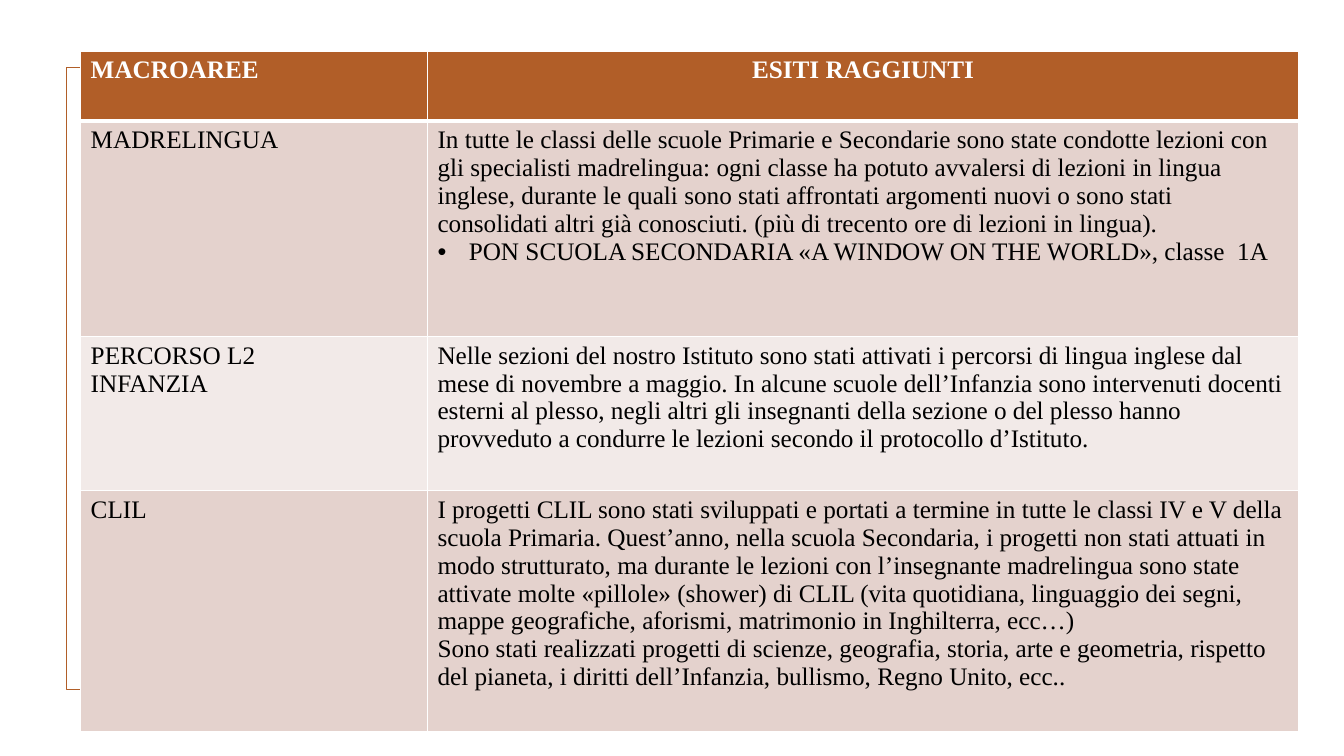
from lxml import etree
from pptx import Presentation
from pptx.dml.color import RGBColor
from pptx.enum.shapes import MSO_SHAPE
from pptx.enum.text import PP_ALIGN
from pptx.oxml.ns import qn
from pptx.util import Inches, Pt

RECTANGLE = MSO_SHAPE.RECTANGLE
LEFT, CENTER = PP_ALIGN.LEFT, PP_ALIGN.CENTER

WHITE = RGBColor(0xFF, 0xFF, 0xFF)
BLACK = RGBColor(0x00, 0x00, 0x00)
RUST = RGBColor(0xB1, 0x5E, 0x28)
BANDS = [RGBColor(0xF2, 0xEA, 0xE8), RGBColor(0xE4, 0xD2, 0xCD)]

FONT_NAME = "Times New Roman"
BULLET = "•"
COLUMN_WIDTHS = [3.44, 8.64]
ROW_HEIGHTS = [0.69, 2.14, 1.53, 2.39]

# Each cell is a list of paragraphs; a leading bullet marks a list item.
ROWS = [
    (["MACROAREE"], ["ESITI RAGGIUNTI"]),
    (["MADRELINGUA"], [
        "In tutte le classi delle scuole Primarie e Secondarie sono state condotte lezioni con "
        "gli specialisti madrelingua: ogni classe ha potuto avvalersi di lezioni in lingua "
        "inglese, durante le quali sono stati affrontati argomenti nuovi o sono stati "
        "consolidati altri già conosciuti. (più di trecento ore di lezioni in lingua).",
        "•PON SCUOLA SECONDARIA «A WINDOW ON THE WORLD», classe  1A",
    ]),
    (["PERCORSO L2", "INFANZIA"], [
        "Nelle sezioni del nostro Istituto sono stati attivati i percorsi di lingua inglese dal "
        "mese di novembre a maggio. In alcune scuole dell’Infanzia sono intervenuti docenti "
        "esterni al plesso, negli altri gli insegnanti della sezione o del plesso hanno "
        "provveduto a condurre le lezioni secondo il protocollo d’Istituto.",
    ]),
    (["CLIL"], [
        "I progetti CLIL sono stati sviluppati e portati a termine in tutte le classi IV e V della "
        "scuola Primaria. Quest’anno, nella scuola Secondaria, i progetti non stati attuati in "
        "modo strutturato, ma durante le lezioni con l’insegnante madrelingua sono state "
        "attivate molte «pillole» (shower) di CLIL (vita quotidiana, linguaggio dei segni, "
        "mappe geografiche, aforismi, matrimonio in Inghilterra, ecc…)",
        "Sono stati realizzati progetti di scienze, geografia, storia, arte e geometria, rispetto "
        "del pianeta, i diritti dell’Infanzia, bullismo, Regno Unito, ecc..",
    ]),
]


def add_frame(slide):
    frame = slide.shapes.add_shape(
        RECTANGLE, Inches(0.66), Inches(0.67), Inches(12), Inches(6.17))
    frame.shadow.inherit = False
    frame.fill.background()
    frame.line.color.rgb = RUST
    frame.line.width = Pt(1.25)


def set_borders(cell, top, bottom):
    """Draw white borders; top and bottom are widths in points."""
    properties = cell._tc.get_or_add_tcPr()
    for side, width in (("L", 1), ("R", 1), ("T", top), ("B", bottom)):
        line = etree.SubElement(properties, qn(f"a:ln{side}"), w=str(Pt(width)))
        fill = etree.SubElement(line, qn("a:solidFill"))
        etree.SubElement(fill, qn("a:srgbClr"), val=str(WHITE))


def add_bullet(paragraph):
    properties = paragraph._p.get_or_add_pPr()
    properties.set("marL", str(Inches(0.31)))
    properties.set("indent", str(-Inches(0.31)))
    etree.SubElement(properties, qn("a:buFont"), typeface="Arial")
    etree.SubElement(properties, qn("a:buChar"), char=BULLET)


def write_cell(cell, texts, color, bold, alignment):
    text_frame = cell.text_frame
    text_frame.text = "\n".join(text.removeprefix(BULLET) for text in texts)
    for paragraph, text in zip(text_frame.paragraphs, texts):
        if text.startswith(BULLET):
            add_bullet(paragraph)
        paragraph.alignment = alignment
        font = paragraph.font
        font.name = FONT_NAME
        font.size = Pt(18)
        font.bold = bold
        font.color.rgb = color


def add_results_table(slide):
    table = slide.shapes.add_table(
        len(ROWS), len(COLUMN_WIDTHS), Inches(0.8), Inches(0.51),
        Inches(sum(COLUMN_WIDTHS)), Inches(sum(ROW_HEIGHTS))).table
    for column, width in zip(table.columns, COLUMN_WIDTHS):
        column.width = Inches(width)
    for row_index, (row, height) in enumerate(zip(table.rows, ROW_HEIGHTS)):
        row.height = Inches(height)
        header = row_index == 0
        for column_index, cell in enumerate(row.cells):
            set_borders(cell, top=3 if row_index == 1 else 1, bottom=3 if header else 1)
            cell.fill.solid()
            cell.fill.fore_color.rgb = RUST if header else BANDS[row_index % 2]
            write_cell(cell, ROWS[row_index][column_index],
                       color=WHITE if header else BLACK, bold=header,
                       alignment=CENTER if header and column_index == 1 else LEFT)


def main():
    presentation = Presentation()
    presentation.slide_width = Inches(13.33)
    presentation.slide_height = Inches(7.5)
    slide = presentation.slides.add_slide(presentation.slide_layouts[6])
    add_frame(slide)
    add_results_table(slide)
    presentation.save("out.pptx")


if __name__ == "__main__":
    main()
